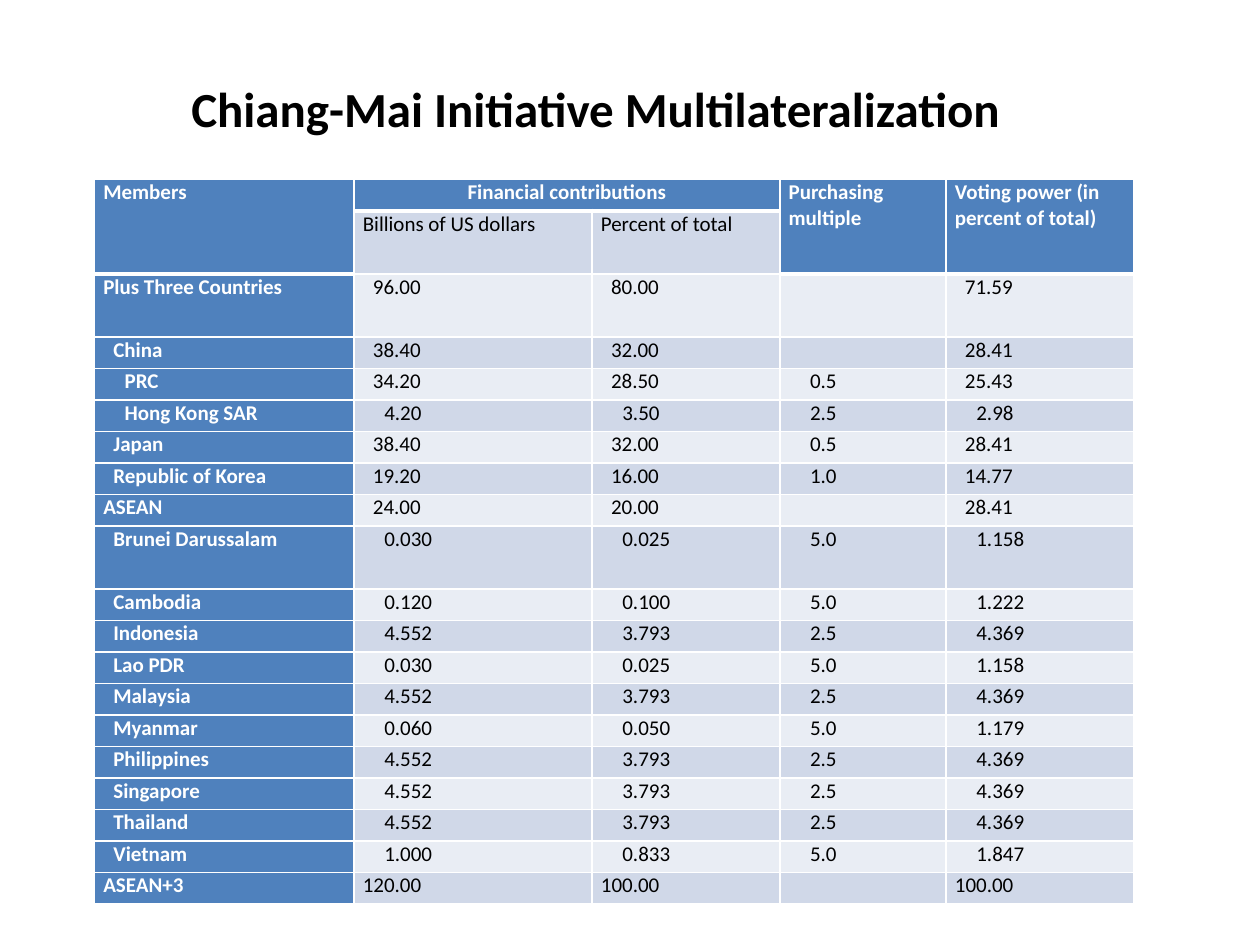
import pptx
import pptx.util
import pptx.enum.text
import pptx.dml.color
import pptx.oxml.ns
import lxml.etree
from dataclasses import dataclass


@dataclass(frozen=True)
class Theme:
    font: str = "Calibri"
    head: str = "4F81BD"
    bands: tuple = ("E9EDF4", "D0D8E8")
    light: str = "FFFFFF"
    dark: str = "000000"
    title: int = 28
    body: int = 12
    thin: int = 1
    thick: int = 3


THEME = Theme()
WIDE, HIGH = 10, 7.5
PADS = (0, 0.08, 0.17)  # first-line indent for each level
COLS = (2.06, 1.89, 1.49, 1.32, 1.49)
TALL = (1, 2, 9)  # rows of double height
MERGED = (0, 3, 4)  # columns whose heading spans two rows

HEADS = [
    ("Members", "Financial contributions", "", "Purchasing multiple",
     "Voting power (in percent of total)"),
    ("", "Billions of US dollars", "Percent of total", "", ""),
]
# Level, member, billions, percent, multiple, votes
DATA = [
    (0, "Plus Three Countries", "96.00", "80.00", "", "71.59"),
    (1, "China", "38.40", "32.00", "", "28.41"),
    (2, "PRC", "34.20", "28.50", "0.5", "25.43"),
    (2, "Hong Kong SAR", "4.20", "3.50", "2.5", "2.98"),
    (1, "Japan", "38.40", "32.00", "0.5", "28.41"),
    (1, "Republic of Korea", "19.20", "16.00", "1.0", "14.77"),
    (0, "ASEAN", "24.00", "20.00", "", "28.41"),
    (1, "Brunei Darussalam", "0.030", "0.025", "5.0", "1.158"),
    (1, "Cambodia", "0.120", "0.100", "5.0", "1.222"),
    (1, "Indonesia", "4.552", "3.793", "2.5", "4.369"),
    (1, "Lao PDR", "0.030", "0.025", "5.0", "1.158"),
    (1, "Malaysia", "4.552", "3.793", "2.5", "4.369"),
    (1, "Myanmar", "0.060", "0.050", "5.0", "1.179"),
    (1, "Philippines", "4.552", "3.793", "2.5", "4.369"),
    (1, "Singapore", "4.552", "3.793", "2.5", "4.369"),
    (1, "Thailand", "4.552", "3.793", "2.5", "4.369"),
    (1, "Vietnam", "1.000", "0.833", "5.0", "1.847"),
    (0, "ASEAN+3", "120.00", "100.00", "", "100.00"),
]


def inch(num):
    return pptx.util.Inches(num)


def color(code):
    return pptx.dml.color.RGBColor.from_string(code)


def style(para, size, bold, code):
    font = para.font
    font.name, font.size, font.bold = THEME.font, pptx.util.Pt(size), bold
    font.color.rgb = color(code)


def add(node, tag, **attrs):
    return lxml.etree.SubElement(node, pptx.oxml.ns.qn(tag), **attrs)


def is_head(row, col):
    return row == 0 or (row == 1 and col in MERGED)


def edge(cell, row, col):
    """Draw white borders, thick below the headings."""
    props = cell._tc.get_or_add_tcPr()
    below = is_head(row, col)
    above = row > 0 and is_head(row - 1, col)
    for side, wide in (("L", False), ("R", False), ("T", above), ("B", below)):
        size = pptx.util.Pt(THEME.thick if wide else THEME.thin)
        line = add(props, "a:ln" + side, w=str(int(size)))
        add(add(line, "a:solidFill"), "a:srgbClr", val=THEME.light)


def fill_cell(cell, row, col, text, level):
    """Format one cell; level picks its indent."""
    edge(cell, row, col)
    dark = is_head(row, col) or col == 0
    cell.fill.solid()
    cell.fill.fore_color.rgb = color(THEME.head if dark else THEME.bands[row % 2])
    cell.margin_left = cell.margin_right = inch(0.07)
    cell.margin_top = cell.margin_bottom = 0
    para = cell.text_frame.paragraphs[0]
    style(para, THEME.body, dark, THEME.light if dark else THEME.dark)
    if not text:  # keeps an empty row from growing
        add(para._p, "a:endParaRPr", sz=str(THEME.body * 100))
        return
    para.add_run().text = text
    para._p.get_or_add_pPr().set("indent", str(int(inch(PADS[level]))))
    if row == 0 and col == 1:
        para.alignment = pptx.enum.text.PP_ALIGN.CENTER


def add_title(slide, box, text):
    frame = slide.shapes.add_textbox(*map(inch, box)).text_frame
    frame.word_wrap = False
    frame.auto_size = pptx.enum.text.MSO_AUTO_SIZE.SHAPE_TO_FIT_TEXT
    para = frame.paragraphs[0]
    para.add_run().text = text
    style(para, THEME.title, True, THEME.dark)


def add_grid(slide, box):
    count = len(HEADS) + len(DATA)
    shape = slide.shapes.add_table(count, len(COLS), *map(inch, box))
    grid = shape.table
    grid.first_row = grid.horz_banding = False

    # Columns and rows share out the box
    for col, part in zip(grid.columns, COLS):
        col.width = inch(box[2] * part / sum(COLS))
    unit = box[3] / (count + len(TALL))
    for row, line in enumerate(grid.rows):
        line.height = inch(unit * (2 if row in TALL else 1))

    # Headings
    for row, texts in enumerate(HEADS):
        for col, text in enumerate(texts):
            fill_cell(grid.cell(row, col), row, col, text, 0)
    for col in MERGED:
        grid.cell(0, col).merge(grid.cell(1, col))
    grid.cell(0, 1).merge(grid.cell(0, 2))

    # Members; numbers line up on the decimal point
    for row, (level, *texts) in enumerate(DATA, len(HEADS)):
        for col, text in enumerate(texts):
            pad = 3 - len(text.split(".")[0]) if col and text else level
            fill_cell(grid.cell(row, col), row, col, text, pad)


def main():
    deck = pptx.Presentation()
    deck.slide_width, deck.slide_height = inch(WIDE), inch(HIGH)
    slide = deck.slides.add_slide(deck.slide_layouts[6])
    add_grid(slide, (0.075 * WIDE, 0.19 * HIGH, 0.825 * WIDE, 5.75))
    add_title(slide, (0.142 * WIDE, 0.077 * HIGH, 0.671 * WIDE, 0.57),
              "Chiang-Mai Initiative Multilateralization")
    deck.save("out.pptx")


if __name__ == "__main__":
    main()
